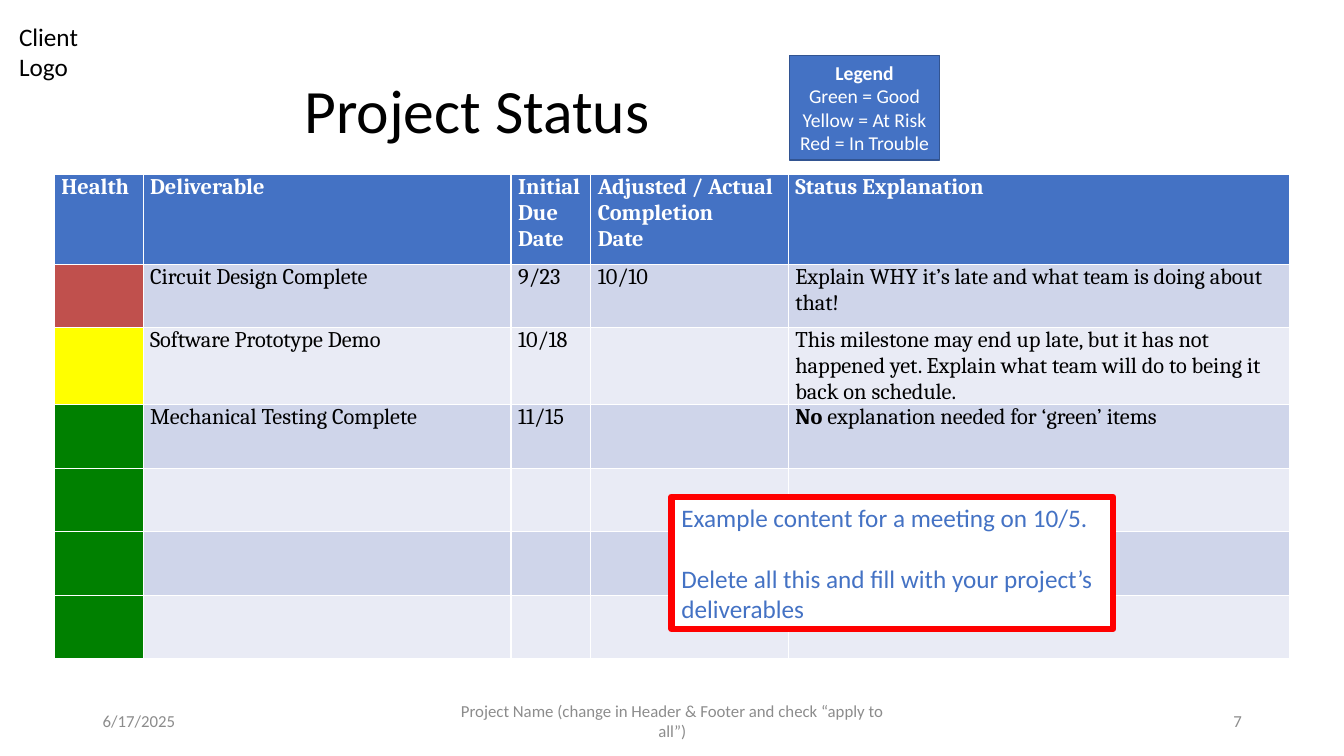
import pptx
import pptx.util
import pptx.dml.color
import pptx.enum.shapes
import pptx.enum.text
import pptx.oxml
import pptx.oxml.ns
from dataclasses import dataclass

Pt = pptx.util.Pt
RGB = pptx.dml.color.RGBColor.from_string
ALIGN = pptx.enum.text.PP_ALIGN
MIDDLE = pptx.enum.text.MSO_ANCHOR.MIDDLE
TOP = pptx.enum.text.MSO_ANCHOR.TOP
RECTANGLE = pptx.enum.shapes.MSO_SHAPE.RECTANGLE


@dataclass(frozen=True)
class Theme:
    sans: str = "Calibri"
    serif: str = "Cambria"
    black: str = "000000"
    white: str = "FFFFFF"
    blue: str = "4472C4"
    navy: str = "325491"
    gray: str = "8C8C8C"
    alert: str = "FF0000"
    red: str = "C0504D"
    yellow: str = "FFFF00"
    green: str = "008000"
    bands: tuple = ("CFD5EA", "E9EBF5")
    title_size: int = 44
    body_size: int = 18
    table_size: int = 16
    legend_size: int = 14
    footer_size: int = 12


theme = Theme()
deck = pptx.Presentation()
deck.slide_width = pptx.util.Inches(13.33)
deck.slide_height = pptx.util.Inches(7.5)
slide = deck.slides.add_slide(deck.slide_layouts[5])


def area(left, top, width, height):
    across, down = deck.slide_width / 100, deck.slide_height / 100
    return int(left * across), int(top * down), int(width * across), int(height * down)


def write(frame, text, size, color, align=ALIGN.LEFT, face=theme.sans, bold=False):
    frame.text = text
    frame.word_wrap = True
    for paragraph in frame.paragraphs:
        paragraph.alignment = align
        paragraph.font.size = Pt(size)
        paragraph.font.name = face
        paragraph.font.bold = bold
        paragraph.font.color.rgb = RGB(color)


title = slide.shapes.title
title.left, title.top, title.width, title.height = area(6.9, 5.33, 86.25, 19.33)
write(title.text_frame, "Project Status", theme.title_size, theme.black)
title.text_frame.auto_size = pptx.enum.text.MSO_AUTO_SIZE.NONE
title.text_frame.vertical_anchor = MIDDLE
title.text_frame.margin_left = pptx.util.Inches(2.1)
title.text_frame.paragraphs[0].line_spacing = 0.9

columns = [6.6, 27.38, 5.93, 14.7, 37.28]
rows = [11.87] + [8.4] * 6
headings = ["Health", "Deliverable", "Initial\nDue\nDate",
            "Adjusted / Actual\nCompletion\nDate", "Status Explanation"]
deliverables = [
    (theme.red, "Circuit Design Complete", "9/23", "10/10",
     "Explain WHY it’s late and what team is doing about that!"),
    (theme.yellow, "Software Prototype Demo", "10/18", "",
     "This milestone may end up late, but it has not happened yet. "
     "Explain what team will do to being it back on schedule."),
    (theme.green, "Mechanical Testing Complete", "11/15", "", "No"),
] + [(theme.green, "", "", "", "")] * 3

status = slide.shapes.add_table(
    len(rows), len(columns), *area(4.05, 23.07, sum(columns), sum(rows))).table
for column, share in zip(status.columns, columns):
    column.width = area(0, 0, share, 0)[2]
for row, share in zip(status.rows, rows):
    row.height = area(0, 0, 0, share)[3]

for r, row in enumerate(status.rows):
    health, *details = deliverables[r - 1]
    texts = ["", *details] if r else headings
    for c, (cell, text) in enumerate(zip(row.cells, texts)):
        properties = cell._tc.get_or_add_tcPr()
        for side in ("lnL", "lnR", "lnT", "lnB"):
            properties.append(pptx.oxml.parse_xml(
                f'<a:{side} {pptx.oxml.ns.nsdecls("a")} w="{Pt(1)}"><a:solidFill>'
                f'<a:srgbClr val="{theme.white}"/></a:solidFill></a:{side}>'))
        band = theme.bands[(r - 1) % 2] if c else health
        cell.fill.solid()
        cell.fill.fore_color.rgb = RGB(band if r else theme.blue)
        cell.margin_left = cell.margin_right = pptx.util.Inches(0.07)
        cell.margin_top = cell.margin_bottom = 0
        cell.vertical_anchor = TOP
        write(cell.text_frame, text, theme.table_size,
              theme.black if r else theme.white, face=theme.serif, bold=not r)

green_note = status.cell(3, 4).text_frame.paragraphs[0]
green_note.runs[0].font.bold = True
green_note.add_run().text = " explanation needed for ‘green’ items"

client = slide.shapes.add_textbox(*area(0.68, 2.13, 8.33, 9.47))
write(client.text_frame, "Client\vLogo", theme.body_size, theme.black)

for left, width, text, align in [
    (6.9, 22.5, "6/17/2025", ALIGN.LEFT),
    (33.15, 33.75, "Project Name (change in Header & Footer and check “apply to all”)",
     ALIGN.CENTER),
    (70.65, 22.5, "7", ALIGN.RIGHT),
]:
    footer = slide.shapes.add_textbox(*area(left, 92.67, width, 5.33))
    write(footer.text_frame, text, theme.footer_size, theme.gray, align)
    footer.text_frame.vertical_anchor = MIDDLE

panels = []
for place, fill, outline, weight, text, size, color, align in [
    ((58.74, 7.33, 11.18, 13.87), theme.blue, theme.navy, 1,
     "Legend\nGreen = Good\nYellow = At Risk\nRed = In Trouble",
     theme.legend_size, theme.white, ALIGN.CENTER),
    ((49.96, 65.73, 32.86, 17.47), theme.white, theme.alert, 4.5,
     "Example content for a meeting on 10/5.\n"
     "Delete all this and fill with your project’s deliverables",
     theme.body_size, theme.blue, ALIGN.LEFT),
]:
    panel = slide.shapes.add_shape(RECTANGLE, *area(*place))
    panel.shadow.inherit = False
    panel.fill.solid()
    panel.fill.fore_color.rgb = RGB(fill)
    panel.line.color.rgb = RGB(outline)
    panel.line.width = Pt(weight)
    write(panel.text_frame, text, size, color, align)
    panel.text_frame.vertical_anchor = MIDDLE
    panels.append(panel.text_frame)

legend, advice = panels
legend.word_wrap = False
legend.paragraphs[0].font.bold = True
advice.paragraphs[1].space_before = Pt(22)

deck.save("out.pptx")
